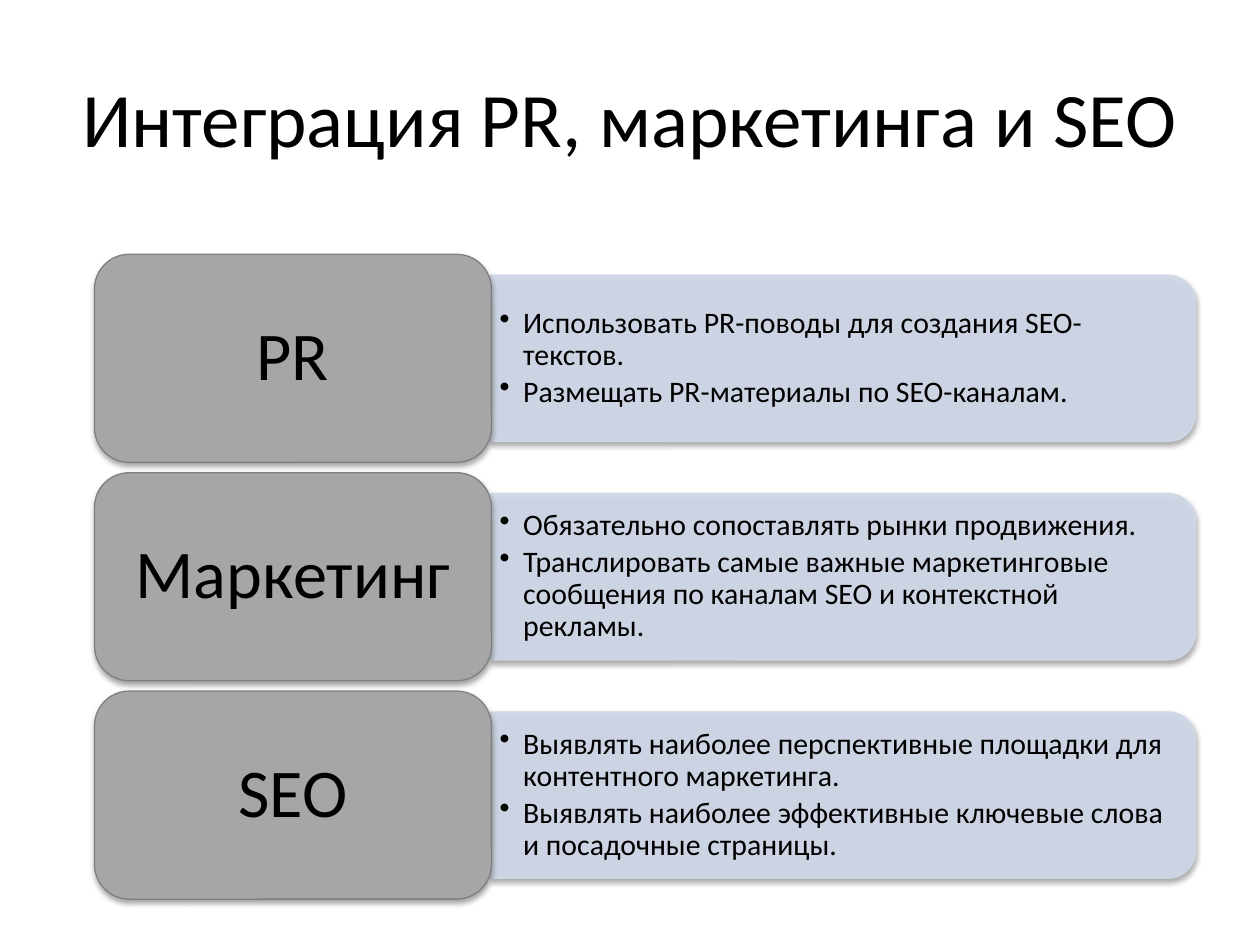
"""Build a slide of three labelled cards on integrating PR, marketing and SEO."""
from dataclasses import dataclass

from lxml import etree
from pptx import Presentation
from pptx.dml.color import RGBColor
from pptx.enum.shapes import MSO_SHAPE
from pptx.enum.text import MSO_ANCHOR, PP_ALIGN
from pptx.oxml.ns import qn
from pptx.util import Pt

CARD, PANEL = MSO_SHAPE.ROUNDED_RECTANGLE, MSO_SHAPE.ROUND_2_SAME_RECTANGLE
MIDDLE, CENTER, LEFT = MSO_ANCHOR.MIDDLE, PP_ALIGN.CENTER, PP_ALIGN.LEFT


@dataclass(frozen=True)
class Theme:
    font: str = "Calibri"
    text: str = "000000"
    card: str = "A6A6A6"
    card_line: str = "7F7F7F"
    panel: str = "D0D8E8"
    title_size: float = 44
    label_size: float = 39
    bullet_size: float = 17


T = Theme()
ROWS = [
    ("PR", ["Использовать PR-поводы для создания SEO-текстов.",
            "Размещать PR-материалы по SEO-каналам."]),
    ("Маркетинг", ["Обязательно сопоставлять рынки продвижения.",
                   "Транслировать самые важные маркетинговые сообщения "
                   "по каналам SEO и контекстной рекламы."]),
    ("SEO", ["Выявлять наиболее перспективные площадки для контентного маркетинга.",
             "Выявлять наиболее эффективные ключевые слова и посадочные страницы."]),
]
CARD_X, CARD_Y, CARD_W, CARD_H, PITCH = 54, 145.3, 226.8, 118.9, 124.8
PANEL_X, PANEL_W, PANEL_H = 280.5, 402.8, 95.1


def add_block(s, kind, x, y, w, h, fill, line):
    """Add a filled shape with a soft shadow below it."""
    sp = s.shapes.add_shape(kind, Pt(x), Pt(y), Pt(w), Pt(h))
    sp.fill.solid()
    sp.fill.fore_color.rgb = RGBColor.from_string(fill)
    sp.line.color.rgb = RGBColor.from_string(line)
    sp.line.width = Pt(0.75)
    sp.shadow.inherit = False
    effects = sp._element.spPr.find(qn("a:effectLst"))
    shadow = etree.SubElement(effects, qn("a:outerShdw"), blurRad="40000",
                              dist="23000", dir="5400000", rotWithShape="0")
    color = etree.SubElement(shadow, qn("a:srgbClr"), val="000000")
    etree.SubElement(color, qn("a:alpha"), val="35000")
    return sp


def write(sp, lines, size, align, inset_x, inset_y):
    """Fill a shape with paragraphs in one style."""
    tf = sp.text_frame
    tf.word_wrap = True
    tf.vertical_anchor = MIDDLE
    tf.margin_left = tf.margin_right = Pt(inset_x)
    tf.margin_top = tf.margin_bottom = Pt(inset_y)
    tf.text = "\n".join(lines)
    for p in tf.paragraphs:
        p.alignment = align
        for r in p.runs:
            r.font.name = T.font
            r.font.size = Pt(size)
            r.font.color.rgb = RGBColor.from_string(T.text)
    return tf.paragraphs


prs = Presentation()
prs.slide_width, prs.slide_height = Pt(720), Pt(540)
s = prs.slides.add_slide(prs.slide_layouts[6])

title = s.shapes.add_textbox(Pt(36), Pt(21.6), Pt(648), Pt(90))
write(title, ["Интеграция PR, маркетинга и SEO"], T.title_size, CENTER, 7.2, 3.6)

for i, (label, bullets) in enumerate(ROWS):
    y = CARD_Y + i * PITCH
    mid = y + CARD_H / 2

    panel = add_block(s, PANEL, PANEL_X + (PANEL_W - PANEL_H) / 2, mid - PANEL_W / 2,
                      PANEL_H, PANEL_W, T.panel, T.panel)
    panel.rotation = 90
    for color in panel._element.spPr.findall(f"*//{qn('a:srgbClr')}")[:2]:
        if color.get("val") == T.panel:
            etree.SubElement(color, qn("a:alpha"), val="90000")

    box = s.shapes.add_textbox(Pt(PANEL_X), Pt(mid - 43), Pt(398.1), Pt(86))
    for p in write(box, bullets, T.bullet_size, LEFT, 5, 2.6):
        p.level = 1
        p.line_spacing = 0.9
        p.space_after = Pt(0.15 * T.bullet_size)
        pPr = p._p.get_or_add_pPr()
        pPr.set("marL", str(Pt(13.5)))
        pPr.set("indent", str(-Pt(13.5)))
        etree.SubElement(pPr, qn("a:buChar"), char="•")

    card = add_block(s, CARD, CARD_X, y, CARD_W, CARD_H, T.card, T.card_line)
    for p in write(card, [label], T.label_size, CENTER, 11.7, 5.8):
        p.line_spacing = 0.9

prs.save("out.pptx")
